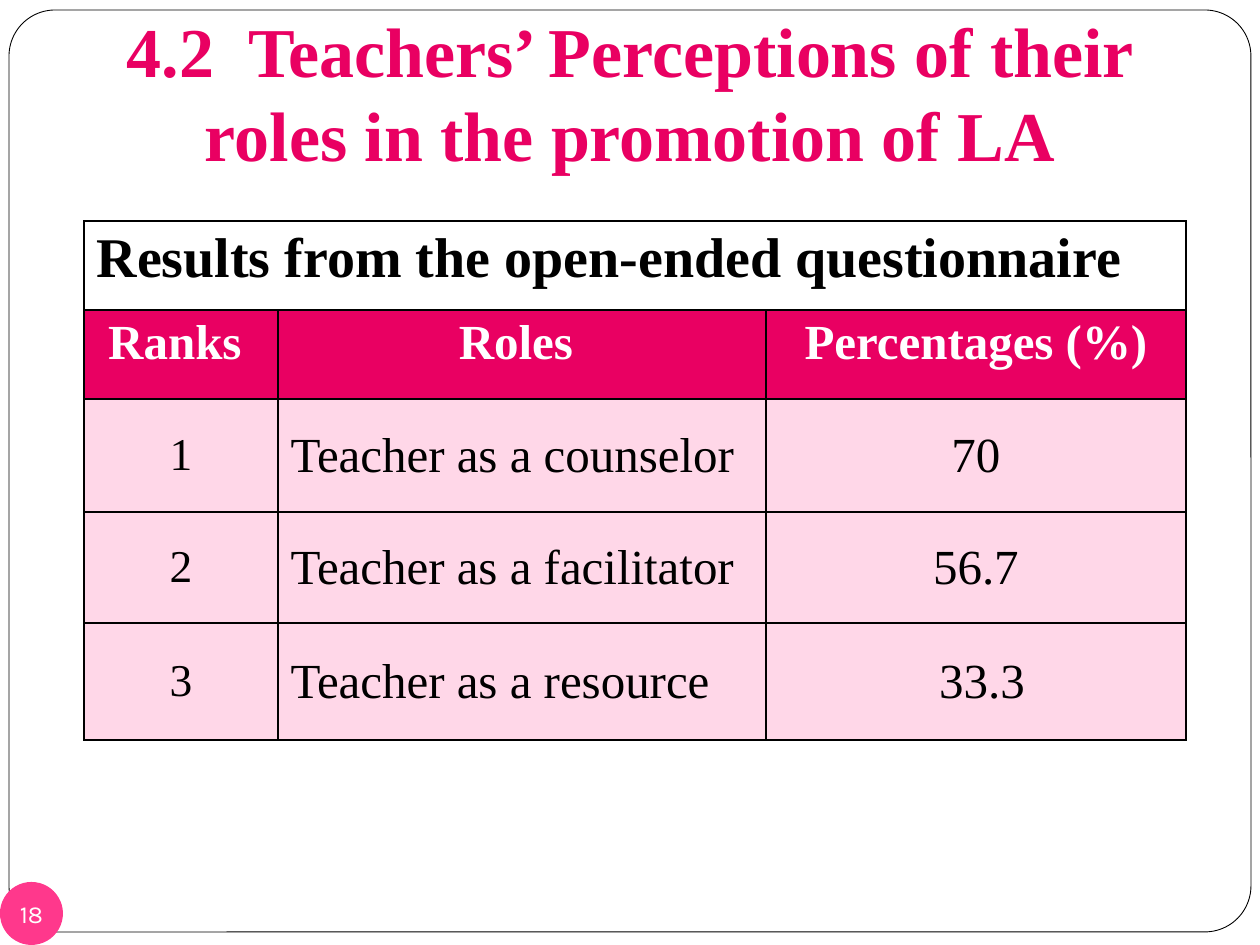
from dataclasses import dataclass

from lxml.etree import SubElement
from pptx import Presentation
from pptx.dml.color import RGBColor
from pptx.enum.shapes import MSO_SHAPE as Shape
from pptx.enum.text import MSO_ANCHOR as Anchor, MSO_AUTO_SIZE as AutoSize, PP_ALIGN as Align
from pptx.oxml.ns import qn
from pptx.util import Emu, Pt

EMU_PER_PX = 914400 / 126


@dataclass(frozen=True)
class Theme:
    accent: str = "E90062"
    tint: str = "FFD7E8"
    badge: str = "FF388C"
    white: str = "FFFFFF"
    black: str = "000000"
    serif: str = "Times New Roman"
    sans: str = "Karla"
    title: int = 40
    caption: int = 32
    body: int = 28
    rank: int = 26
    number: int = 14


def px(length):
    return Emu(round(length * EMU_PER_PX))


def write(frame, text, *, size, color, font, bold=False, align=Align.LEFT):
    paragraph = frame.paragraphs[0]
    paragraph.alignment = align
    run = paragraph.add_run()
    run.text = text
    run.font.size = Pt(size)
    run.font.name = font
    run.font.bold = bold
    run.font.color.rgb = RGBColor.from_string(color)


def set_insets(frame, left, top, right, bottom):
    frame.margin_left, frame.margin_top = px(left), px(top)
    frame.margin_right, frame.margin_bottom = px(right), px(bottom)


def outline_cell(cell, color, width):
    """Draw all four borders; they must come before the fill in the cell XML."""
    properties = cell._tc.get_or_add_tcPr()
    for side in ("lnL", "lnR", "lnT", "lnB"):
        line = SubElement(properties, qn(f"a:{side}"), w=str(Pt(width)))
        fill = SubElement(line, qn("a:solidFill"))
        SubElement(fill, qn("a:srgbClr"), val=color)


class SlideBuilder:
    def __init__(self, presentation, theme):
        self.theme = theme
        self.slide = presentation.slides.add_slide(presentation.slide_layouts[5])

    def shape(self, kind, box, fill, line=None):
        shape = self.slide.shapes.add_shape(kind, *map(px, box))
        shape.shadow.inherit = False
        shape.fill.solid()
        shape.fill.fore_color.rgb = RGBColor.from_string(fill)
        if line:
            shape.line.color.rgb = RGBColor.from_string(line)
            shape.line.width = Pt(0.5)
        else:
            shape.line.fill.background()
        return shape

    def frame(self, box):
        shape = self.shape(Shape.ROUNDED_RECTANGLE, box, self.theme.white, self.theme.black)
        shape.adjustments[0] = 0.05

    def title(self, box, text):
        title = self.slide.shapes.title
        title.left, title.top, title.width, title.height = map(px, box)
        title.element.getparent().append(title.element)  # in front of the frame
        frame = title.text_frame
        frame.word_wrap = True
        frame.auto_size = AutoSize.NONE
        frame.vertical_anchor = Anchor.BOTTOM
        set_insets(frame, 13, 6, 13, 13)
        write(frame, text, size=self.theme.title, color=self.theme.accent,
              font=self.theme.serif, bold=True, align=Align.CENTER)

    def cell(self, cell, text, *, fill=None, anchor=Anchor.TOP, **text_format):
        outline_cell(cell, self.theme.black, 1)
        if fill:
            cell.fill.solid()
            cell.fill.fore_color.rgb = RGBColor.from_string(fill)
        else:
            cell.fill.background()
        cell.vertical_anchor = anchor
        if text:
            write(cell.text_frame, text, font=self.theme.serif, **text_format)

    def table(self, left, top, widths, heights, caption, header, rows):
        theme = self.theme
        table = self.slide.shapes.add_table(
            len(heights), len(widths), px(left), px(top),
            px(sum(widths)), px(sum(heights))).table
        for column, width in zip(table.columns, widths):
            column.width = px(width)
        for row, height in zip(table.rows, heights):
            row.height = px(height)

        for column, text in enumerate((caption, "", "")):
            self.cell(table.cell(0, column), text, size=theme.caption,
                      color=theme.black, bold=True)
        table.cell(0, 0).merge(table.cell(0, len(widths) - 1))
        for column, text in enumerate(header):
            self.cell(table.cell(1, column), text, fill=theme.accent, size=theme.body,
                      color=theme.white, bold=True, align=Align.CENTER)

        sizes = (theme.rank, theme.body, theme.body)
        aligns = (Align.CENTER, Align.LEFT, Align.CENTER)
        for row, texts in enumerate(rows, start=2):
            for column, (text, size, align) in enumerate(zip(texts, sizes, aligns)):
                self.cell(table.cell(row, column), text, fill=theme.tint,
                          anchor=Anchor.MIDDLE, size=size, color=theme.black, align=align)
            set_insets(table.cell(row, 2), 9, 0, 9, 0)

    def page_number(self, box, text):
        frame = self.shape(Shape.OVAL, box, self.theme.badge).text_frame
        frame.word_wrap = False
        frame.vertical_anchor = Anchor.MIDDLE
        set_insets(frame, 0, 0, 0, 0)
        write(frame, text, size=self.theme.number, color=self.theme.white,
              font=self.theme.sans, align=Align.CENTER)


def main():
    presentation = Presentation()
    presentation.slide_width, presentation.slide_height = px(1260), px(945)
    builder = SlideBuilder(presentation, Theme())
    builder.frame((9, 10, 1242, 922))
    builder.title((63, 42, 1134, 147),
                  "4.2  Teachers’ Perceptions of their roles in the promotion of LA")
    builder.table(
        84, 221, widths=(194, 488, 420), heights=(89, 89, 113, 111, 117),
        caption="Results from the open-ended questionnaire",
        header=("Ranks ", "Roles ", "Percentages (%)"),
        rows=(("1", "Teacher as a counselor", "70"),
              ("2", "Teacher as a facilitator", "56.7"),
              ("3", "Teacher as a resource", " 33.3")))
    builder.page_number((0, 882, 63, 63), "18")
    presentation.save("out.pptx")


if __name__ == "__main__":
    main()
